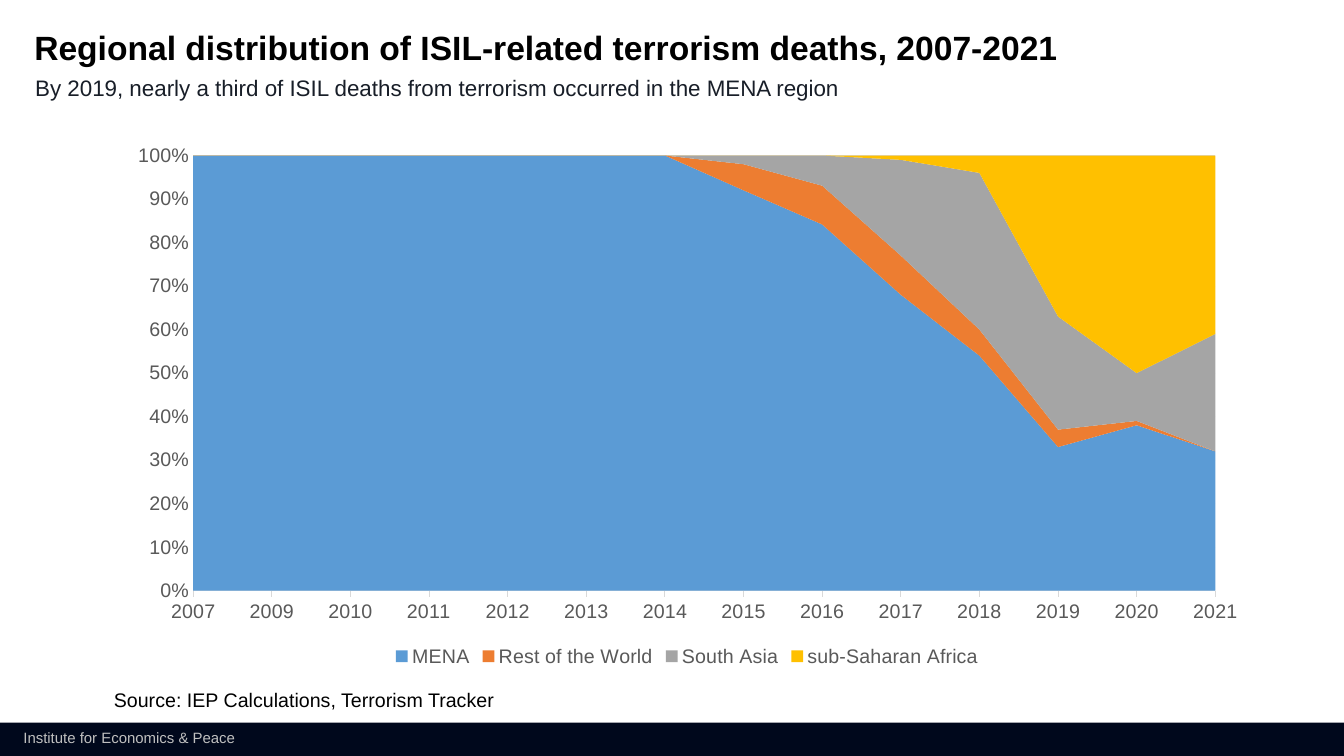
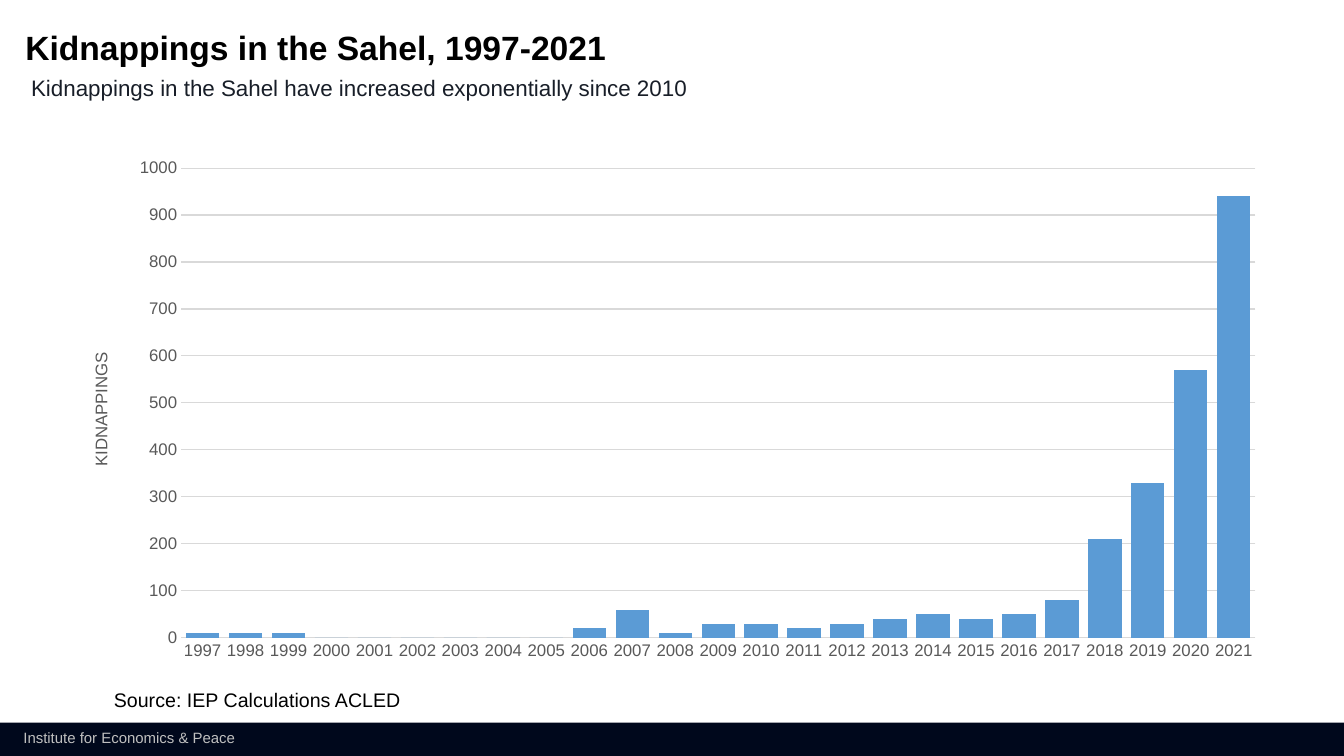
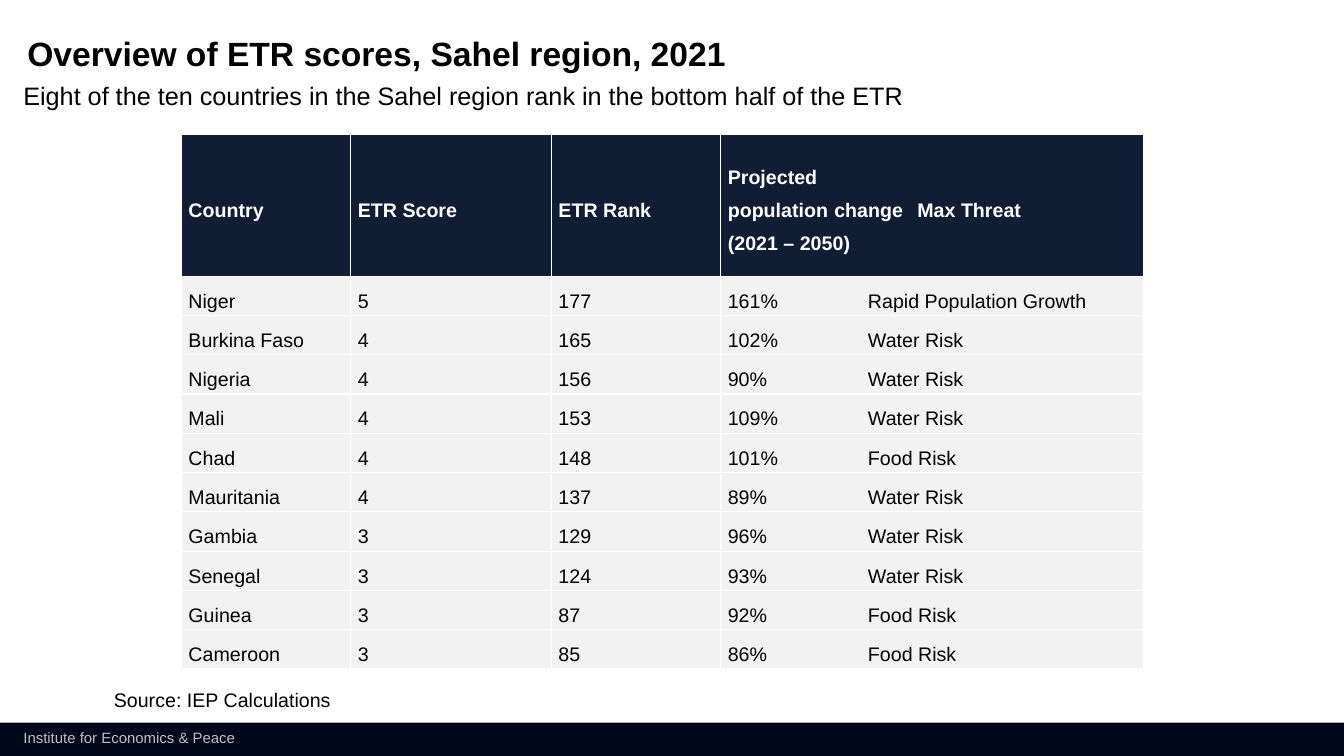
from lxml.etree import SubElement
from pptx import Presentation
from pptx.chart.data import CategoryChartData as ChartData
from pptx.dml.color import RGBColor
from pptx.enum.chart import XL_CHART_TYPE as ChartType, XL_LEGEND_POSITION as LegendPosition
from pptx.enum.chart import XL_TICK_MARK as TickMark
from pptx.enum.shapes import MSO_SHAPE as Preset
from pptx.enum.text import MSO_ANCHOR as Anchor, MSO_AUTO_SIZE as AutoSize, PP_ALIGN as Align
from pptx.oxml import parse_xml
from pptx.oxml.ns import nsdecls, qn
from pptx.util import Inches, Pt

color = RGBColor.from_string
FONT = "Arial"
BLACK, WHITE, GREY, RULE = "000000", "FFFFFF", "595959", "D9D9D9"
BAND, HEADER, CELL = "00081C", "111D35", "F2F2F2"
BLUE, ORANGE, SILVER, GOLD = "5B9BD5", "ED7D31", "A5A5A5", "FFC000"

TITLE_FRAME = {"margin_left": 0, "margin_top": 0, "margin_right": 0, "margin_bottom": 0,
               "word_wrap": True, "auto_size": AutoSize.NONE, "vertical_anchor": Anchor.MIDDLE}
TITLE_PARAGRAPH = {"alignment": Align.LEFT, "line_spacing": 0.9}
NOTE_FRAME = {"word_wrap": True, "auto_size": AutoSize.SHAPE_TO_FIT_TEXT}
FOOTER_FRAME = {"word_wrap": False, "auto_size": AutoSize.SHAPE_TO_FIT_TEXT}
CELL_PARAGRAPH = {"alignment": Align.JUSTIFY, "line_spacing": 1.5, "space_after": Pt(8)}
CELL_FORMAT = {"margin_left": Inches(0.07), "margin_right": Inches(0.07), "margin_top": 0,
               "margin_bottom": 0, "vertical_anchor": Anchor.MIDDLE}

presentation = Presentation()
presentation.slide_width = Inches(13.33)
presentation.slide_height = Inches(7.5)
# The grid has 100 columns and 100 rows.
COLUMN = presentation.slide_width / 100
ROW = presentation.slide_height / 100


def place(left, top, width, height):
    """Turn columns and rows of the grid into slide lengths."""
    return [round(left * COLUMN), round(top * ROW), round(width * COLUMN), round(height * ROW)]


def write(frame, text, size, ink, frame_format=None, paragraph_format=None, bold=False):
    """Put one formatted paragraph into a text frame."""
    frame.text = text
    paragraph = frame.paragraphs[0]
    font = paragraph.runs[0].font
    font_format = {"name": FONT, "size": Pt(size), "bold": bold}
    for target, values in ((frame, frame_format), (paragraph, paragraph_format), (font, font_format)):
        for name, value in (values or {}).items():
            setattr(target, name, value)
    font.color.rgb = color(ink)


# Titles, subtitles and sources
headings = [
    {"title": "Regional distribution of ISIL-related terrorism deaths, 2007-2021",
     "title_box": (2.55, 3.87, 86, 5.33),
     "subtitle": "By 2019, nearly a third of ISIL deaths from terrorism occurred in the MENA region",
     "subtitle_box": (1.88, 9.2, 74.34, 4.93), "size": 16, "ink": "181E28",
     "source": "Source: IEP Calculations, Terrorism Tracker"},
    {"title": "Kidnappings in the Sahel, 1997-2021",
     "title_box": (1.88, 3.87, 86, 5.33),
     "subtitle": "Kidnappings in the Sahel have increased exponentially since 2010",
     "subtitle_box": (1.58, 9.2, 74.34, 4.93), "size": 16, "ink": "181E28",
     "source": "Source: IEP Calculations ACLED"},
    {"title": "Overview of ETR scores, Sahel region, 2021",
     "title_box": (2.03, 4.67, 81, 5.33),
     "subtitle": "Eight of the ten countries in the Sahel region rank in the bottom half of the ETR",
     "subtitle_box": (1, 10, 74.34, 5.33), "size": 18, "ink": BLACK,
     "source": "Source: IEP Calculations"},
]
slides = []
for heading in headings:
    slide = presentation.slides.add_slide(presentation.slide_layouts[5])
    title = slide.shapes.title
    title.left, title.top, title.width, title.height = place(*heading["title_box"])
    write(title.text_frame, heading["title"], 24, BLACK, TITLE_FRAME, TITLE_PARAGRAPH, bold=True)
    subtitle = slide.shapes.add_textbox(*place(*heading["subtitle_box"]))
    write(subtitle.text_frame, heading["subtitle"], heading["size"], heading["ink"], NOTE_FRAME)
    source = slide.shapes.add_textbox(*place(7.73, 90.4, 36.23, 4.53))
    write(source.text_frame, heading["source"], 14, BLACK, NOTE_FRAME)
    slides.append(slide)

# The footer is made on a slide, then moved to the master that all slides share.
band = slides[0].shapes.add_shape(Preset.RECTANGLE, *place(0, 95.6, 100, 4.4))
band.shadow.inherit = False
band.fill.solid()
band.fill.fore_color.rgb = color(BAND)
band.line.fill.background()
footer = slides[0].shapes.add_textbox(*place(1, 95.73, 17.4, 3.73))
write(footer.text_frame, "Institute for Economics & Peace", 10.7, "BFBFBF", FOOTER_FRAME)
for number, shape in enumerate((band, footer), start=101):
    shape.element.xpath("./p:nvSpPr/p:cNvPr")[0].set("id", str(number))
    presentation.slide_master.shapes.element.append(shape.element)

# Charts
deaths = {
    "type": ChartType.AREA_STACKED_100, "box": (8.4, 17.73, 85.45, 71.07),
    "plot": {"x": 0.07, "y": 0.04, "w": 0.89, "h": 0.81},
    "size": 14, "format": "0%", "tick": TickMark.OUTSIDE, "cross": "midCat",
    "categories": [2007, *range(2009, 2022)],
    "series": [
        ("MENA", BLUE, [100] * 7 + [92, 85, 68, 54, 33, 38, 32]),
        ("Rest of the World", ORANGE, [0] * 7 + [6, 9, 9, 6, 4, 1, 0]),
        ("South Asia", SILVER, [0] * 7 + [2, 7, 22, 36, 26, 11, 27]),
        ("sub-Saharan Africa", GOLD, [0] * 9 + [1, 4, 37, 50, 41]),
    ],
}
kidnappings = {
    "type": ChartType.COLUMN_CLUSTERED, "box": (5.4, 19.47, 89.8, 69.07),
    "plot": {"x": 0.09, "y": 0.04, "w": 0.89, "h": 0.9},
    "size": 12, "format": "0", "tick": TickMark.NONE, "cross": "between",
    "categories": range(1997, 2022),
    "series": [("Series 1", BLUE, [10, 10, 10, 0, 0, 0, 0, 0, 0, 20, 60, 10, 30, 30, 20, 30, 40, 50,
                                   40, 50, 80, 210, 330, 570, 940])],
}
charts = []
for slide, design in zip(slides, (deaths, kidnappings)):
    data = ChartData()
    data.categories = [str(year) for year in design["categories"]]
    for name, _, values in design["series"]:
        data.add_series(name, values)
    chart = slide.shapes.add_chart(design["type"], *place(*design["box"]), data).chart
    chart.has_title = False
    chart.has_legend = False
    chart.font.name = FONT
    chart.font.size = Pt(design["size"])
    chart.font.color.rgb = color(GREY)

    years, amounts = chart.category_axis, chart.value_axis
    years.major_tick_mark = design["tick"]
    years.has_major_gridlines = False
    amounts.major_tick_mark = TickMark.NONE
    amounts.has_major_gridlines = True
    amounts.tick_labels.number_format = design["format"]
    amounts.tick_labels.number_format_is_linked = False
    amounts.format.line.fill.background()
    for line in (years.format.line, amounts.major_gridlines.format.line):
        line.width = Pt(0.75)
        line.color.rgb = color(RULE)
    for cross in chart.element.xpath(".//c:valAx/c:crossBetween"):
        cross.set("val", design["cross"])

    plot = chart.plots[0]
    plot.vary_by_categories = False
    for series, (_, fill_color, _) in zip(plot.series, design["series"]):
        series.format.fill.solid()
        series.format.fill.fore_color.rgb = color(fill_color)

    plot_area = chart.element.xpath(".//c:plotArea")[0]
    for layout in plot_area.xpath("./c:layout"):
        plot_area.remove(layout)
    layout = parse_xml(f"<c:layout {nsdecls('c')}><c:manualLayout/></c:layout>")
    settings = {"layoutTarget": "inner", "xMode": "edge", "yMode": "edge", **design["plot"]}
    for name, value in settings.items():
        SubElement(layout[0], qn(f"c:{name}")).set("val", str(value))
    plot_area.insert(0, layout)
    charts.append(chart)

deaths_chart, kidnappings_chart = charts
deaths_chart.has_legend = True
deaths_chart.legend.position = LegendPosition.BOTTOM
deaths_chart.legend.include_in_layout = False

kidnappings_chart.plots[0].gap_width = 29
kidnappings_chart.plots[0].overlap = -57
axis = kidnappings_chart.value_axis
axis.minimum_scale, axis.maximum_scale, axis.major_unit = 0, 1000, 100
write(axis.axis_title.text_frame, "KIDNAPPINGS", 12, GREY)
title_body = kidnappings_chart.element.xpath(".//c:valAx/c:title//a:bodyPr")[0]
title_body.set("rot", "-5400000")
title_body.set("vert", "horz")

# Table: the header joins columns 3 and 4, the other rows join columns 4 and 5.
rows = [
    ("Country", "ETR Score", "ETR Rank", "Projected population change (2021 – 2050)", "Max Threat"),
    ("Niger", "5", "177", "161%", "Rapid Population Growth"),
    ("Burkina Faso", "4", "165", "102%", "Water Risk"),
    ("Nigeria", "4", "156", "90%", "Water Risk"),
    ("Mali", "4", "153", "109%", "Water Risk"),
    ("Chad", "4", "148", "101%", "Food Risk"),
    ("Mauritania", "4", "137", "89%", "Water Risk"),
    ("Gambia", "3", "129", "96%", "Water Risk"),
    ("Senegal", "3", "124", "93%", "Water Risk"),
    ("Guinea", "3", "87", "92%", "Food Risk"),
    ("Cameroon", "3", "85", "86%", "Food Risk"),
]
widths = [12.6, 14.93, 12.6, 10.43, 3.68, 17.33]
heights = [18.8] + [5.2] * (len(rows) - 1)
edges = ["LRTB", "LRTB", "LRTB", "LTB", "TB", "RTB"]
table = slides[2].shapes.add_table(
    len(rows), len(widths), *place(13.5, 17.73, sum(widths), sum(heights))).table
for column, width in zip(table.columns, widths):
    column.width = round(width * COLUMN)
for row, height in zip(table.rows, heights):
    row.height = round(height * ROW)

for row_index, texts in enumerate(rows):
    is_header = row_index == 0
    for column_index, visible in enumerate(edges):
        cell = table.cell(row_index, column_index)
        cell.fill.solid()
        cell.fill.fore_color.rgb = color(HEADER if is_header else CELL)
        for name, value in CELL_FORMAT.items():
            setattr(cell, name, value)
        for position, side in enumerate("LRTB"):
            paint = f'<a:solidFill><a:srgbClr val="{WHITE}"/></a:solidFill>'
            if side not in visible:
                paint = "<a:noFill/>"
            border = parse_xml(f'<a:ln{side} {nsdecls("a")} w="{Pt(1)}">{paint}</a:ln{side}>')
            cell._tc.get_or_add_tcPr().insert(position, border)
    first = 3 if is_header else 4
    table.cell(row_index, first).merge(table.cell(row_index, first + 1))
    text_columns = (0, 1, 2, 3, 5 if is_header else 4)
    for column_index, text in zip(text_columns, texts):
        write(table.cell(row_index, column_index).text_frame, text, 14,
              WHITE if is_header else BLACK, None, CELL_PARAGRAPH, bold=is_header)

presentation.save("out.pptx")
